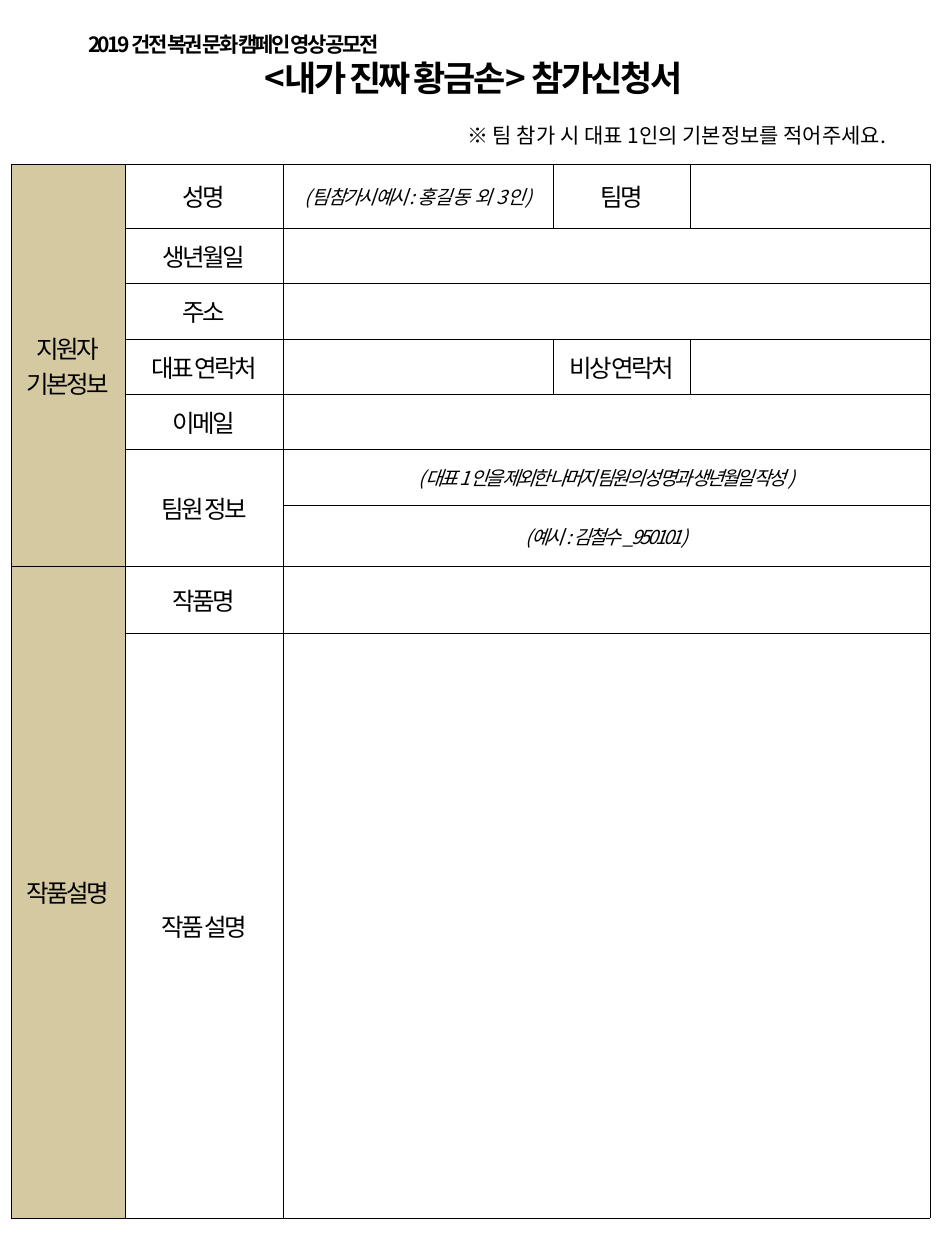
import pptx
import pptx.util
import pptx.dml.color
import pptx.enum.text
import pptx.oxml.ns
import lxml.etree

Inches = pptx.util.Inches
Pt = pptx.util.Pt
ALIGN = pptx.enum.text.PP_ALIGN
FONT = "Noto Sans CJK KR"
COLORS = {"ink": "000000", "header": "D5C9A2"}


def style_font(font, size, spacing=0, bold=False, italic=False):
    font.name = FONT
    font.size = Pt(size)
    font.bold = bold
    font.italic = italic
    font.color.rgb = pptx.dml.color.RGBColor.from_string(COLORS["ink"])
    properties = font._element if hasattr(font, "_element") else font._rPr
    properties.set("spc", str(int(spacing * 100)))
    east_asian = lxml.etree.Element(pptx.oxml.ns.qn("a:ea"), typeface=FONT)
    properties.find(pptx.oxml.ns.qn("a:latin")).addnext(east_asian)


def draw_borders(cell):
    properties = cell._tc.get_or_add_tcPr()
    for position, side in enumerate(("a:lnL", "a:lnR", "a:lnT", "a:lnB")):
        line = lxml.etree.Element(pptx.oxml.ns.qn(side), w=str(Pt(0.28)))
        fill = lxml.etree.SubElement(line, pptx.oxml.ns.qn("a:solidFill"))
        lxml.etree.SubElement(fill, pptx.oxml.ns.qn("a:srgbClr"), val=COLORS["ink"])
        properties.insert(position, line)


deck = pptx.Presentation()
deck.slide_width = Inches(7.5)
deck.slide_height = Inches(10)
page = deck.slides.add_slide(deck.slide_layouts[6])

text_boxes = [
    ((0.6, 0.2, 6.31, 0.64), [
        ("2019 건전 복권 문화 캠페인 영상 공모전", 12, -1.5, True, ALIGN.LEFT),
        ("<내가 진짜 황금손> 참가신청서", 20, -1.5, True, ALIGN.CENTER),
    ]),
    ((3.61, 0.92, 3.8, 0.3), [
        ("※ 팀 참가 시 대표 1인의 기본정보를 적어주세요.", 12, 0, False, ALIGN.LEFT),
    ]),
]
for bounds, lines in text_boxes:
    box = page.shapes.add_textbox(*[Inches(value) for value in bounds])
    box.text_frame.word_wrap = True
    for index, (text, size, spacing, bold, alignment) in enumerate(lines):
        para = box.text_frame.paragraphs[0] if index == 0 else box.text_frame.add_paragraph()
        para.text = text
        para.alignment = alignment
        style_font(para.font, size, spacing, bold)

column_widths = [0.9, 1.26, 2.14, 1.09, 1.9]
row_heights = [0.51] + [0.44] * 5 + [0.48, 0.53, 4.64]
frame = page.shapes.add_table(
    len(row_heights), len(column_widths), Inches(0.09), Inches(1.3),
    Inches(sum(column_widths)), Inches(sum(row_heights)))
form = frame.table
form.first_row = False
form.horz_banding = False
for column, width in zip(form.columns, column_widths):
    column.width = Inches(width)
for row, height in zip(form.rows, row_heights):
    row.height = Inches(height)

labels = {
    (0, 0): "지원자\n기본정보",
    (0, 1): "성명",
    (0, 3): "팀명",
    (1, 1): "생년월일",
    (2, 1): "주소",
    (3, 1): "대표 연락처",
    (3, 3): "비상 연락처",
    (4, 1): "이메일",
    (5, 1): "팀원 정보",
    (7, 0): "작품설명",
    (7, 1): "작품명",
    (8, 1): "작품 설명",
}
hints = {
    (0, 2): ["(팀 참가시 예시 : ", "홍길동 외 3인)"],
    (5, 2): ["(대표 1인을 제외한 나머지 팀원의 성명과 생년월일 작성 )"],
    (6, 2): ["(예시 : 김철수 _950101 )"],
}
header_cells = [(0, 0), (7, 0)]

for row in range(len(row_heights)):
    for column in range(len(column_widths)):
        cell = form.cell(row, column)
        cell.margin_left = cell.margin_right = Inches(0.03)
        cell.margin_top = cell.margin_bottom = Inches(0.01)
        cell.vertical_anchor = pptx.enum.text.MSO_ANCHOR.MIDDLE
        if (row, column) in header_cells:
            cell.fill.solid()
            cell.fill.fore_color.rgb = pptx.dml.color.RGBColor.from_string(COLORS["header"])
        else:
            cell.fill.background()
        draw_borders(cell)
        hint = hints.get((row, column))
        if hint:
            para = cell.text_frame.paragraphs[0]
            for index, text in enumerate(hint):
                span = para.add_run()
                span.text = text
                if index:
                    span.font._element.set("spc", "0") if hasattr(span.font, "_element") else span.font._rPr.set("spc", "0")
        else:
            cell.text_frame.text = labels.get((row, column), "")
        for para in cell.text_frame.paragraphs:
            para.alignment = ALIGN.CENTER
            style_font(para.font, 11 if hint else 14, -1.5, italic=bool(hint))

for row in (1, 2, 4, 5, 6, 7, 8):
    form.cell(row, 2).merge(form.cell(row, 4))
form.cell(0, 0).merge(form.cell(6, 0))
form.cell(5, 1).merge(form.cell(6, 1))
form.cell(7, 0).merge(form.cell(8, 0))

deck.save("out.pptx")
